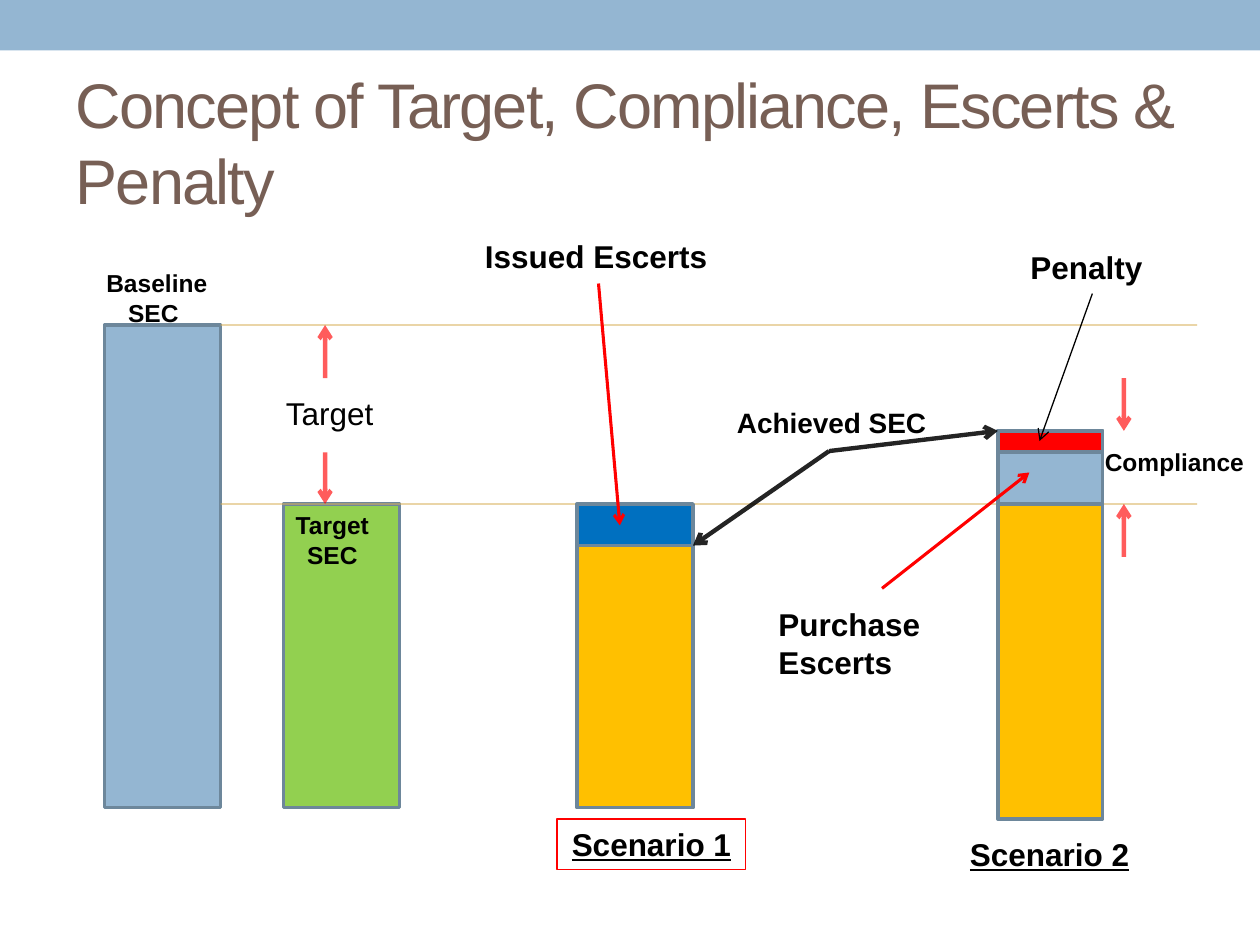
import pptx
import pptx.util
import pptx.dml.color
import pptx.oxml
import pptx.oxml.ns
import pptx.enum.text
import pptx.enum.shapes
from pptx.util import Inches

SHAPE = pptx.enum.shapes.MSO_SHAPE
ALIGN = pptx.enum.text.PP_ALIGN
FONT = "Arial"
BLACK, RED, BLUE, YELLOW = "000000", "FF0000", "94B6D2", "FFC000"
BASELINE_Y, TARGET_Y, ACHIEVED_Y = 2.58, 4, 3.42
BAR_W = 0.92


def rgb(color):
    return pptx.dml.color.RGBColor.from_string(color)


def add_xml(parent, tag, **attrs):
    """Append an empty drawing element with the given attributes."""
    el = pptx.oxml.parse_xml(f"<a:{tag} {pptx.oxml.ns.nsdecls('a')}/>")
    for name, value in attrs.items():
        el.set(name, value)
    parent.append(el)


def add_box(s, box, fill=None, line=None, width=2.08, shape=SHAPE.RECTANGLE):
    sp = s.shapes.add_shape(shape, *map(Inches, box))
    sp.shadow.inherit = False
    if fill:
        sp.fill.solid()
        sp.fill.fore_color.rgb = rgb(fill)
    else:
        sp.fill.background()
    if line:
        sp.line.color.rgb = rgb(line)
        sp.line.width = pptx.util.Pt(width)
    else:
        sp.line.fill.background()
    return sp


def add_bar(s, box, fill):
    return add_box(s, box, fill, "6D879B", shape=SHAPE.FLOWCHART_PROCESS)


def format_text(tf, size, color=BLACK, bold=True, align=ALIGN.LEFT, underline=None):
    tf.word_wrap = True
    for p in tf.paragraphs:
        p.alignment = align
        for r in p.runs:
            r.font.name = FONT
            r.font.size = pptx.util.Pt(size)
            r.font.bold = bold
            r.font.underline = underline
            r.font.color.rgb = rgb(color)


def add_label(s, box, text, size=18, **style):
    sp = s.shapes.add_textbox(*map(Inches, box))
    sp.text_frame.text = text
    format_text(sp.text_frame, size, **style)


def add_line(s, start, end, color, width, opacity=100, arrow=True):
    sp = s.shapes.add_connector(pptx.enum.shapes.MSO_CONNECTOR.STRAIGHT,
                                *map(Inches, start + end))
    sp.line.color.rgb = rgb(color)
    sp.line.width = pptx.util.Pt(width)
    ln = sp.line._get_or_add_ln()
    if opacity < 100:
        add_xml(ln.find(".//" + pptx.oxml.ns.qn("a:srgbClr")), "alpha",
                val=str(opacity * 1000))
    if arrow:
        add_xml(ln, "tailEnd", type="arrow")
    add_xml(sp._element.spPr, "effectLst")


def add_gap_arrow(s, x, start, end):
    """Short vertical arrow pointing at one end of a gap."""
    add_line(s, (x, start), (x, end), RED, 2.5, 63)


def build_header(s, box):
    x, y, w, h = box
    add_box(s, (x, y, w, 0.4), BLUE)
    title = s.shapes.title
    title.left, title.top = Inches(x + 0.5), Inches(y + 0.58)
    title.width, title.height = Inches(w - 1), Inches(h - 0.58)
    tf = title.text_frame
    tf.text = "Concept of Target, Compliance, Escerts & Penalty"
    tf.auto_size = pptx.enum.text.MSO_AUTO_SIZE.NONE
    tf.vertical_anchor = pptx.enum.text.MSO_ANCHOR.MIDDLE
    format_text(tf, 36, "775F55", bold=None)
    tf.paragraphs[0].runs[0].font._element.set("spc", "-100")


def build_baseline_and_target(s, box):
    x, y, w, h = box
    target_x = x + w - BAR_W
    add_bar(s, (x, y, BAR_W, h), BLUE)
    add_bar(s, (target_x, TARGET_Y, BAR_W, y + h - TARGET_Y), "92D050")
    # Reference levels across the chart
    for level in (y, TARGET_Y):
        add_line(s, (x + BAR_W, level), (9.5, level), "D8B25C", 0.75, 81, arrow=False)
    add_label(s, (x - 0.25, y - 0.5, 1.33, 0.57), "Baseline SEC ", 14,
              align=ALIGN.CENTER)
    add_label(s, (target_x - 0.25, TARGET_Y, 1.33, 0.57), "Target \nSEC ", 14,
              align=ALIGN.CENTER)
    # Target gap
    add_label(s, (target_x - 0.08, y + 0.5, 1, 0.4), "Target", bold=False)
    add_gap_arrow(s, target_x + 0.33, y + 0.42, y)
    add_gap_arrow(s, target_x + 0.33, TARGET_Y - 0.41, TARGET_Y)


def build_scenario_1(s, box):
    x, y, w, h = box
    issued_h = 0.33
    add_bar(s, (x, y + issued_h, w, h - issued_h), YELLOW)
    add_bar(s, (x, y, w, issued_h), "0070C0")
    caption = add_box(s, (x - 0.16, y + h + 0.09, 1.5, 0.4), line=RED, width=0.75)
    caption.text_frame.text = "Scenario 1 "
    format_text(caption.text_frame, 18, align=ALIGN.CENTER, underline=True)
    # Issued certificates callout
    add_label(s, (x - 0.83, y - 2.17, 2.08, 0.4), "Issued Escerts")
    add_line(s, (x + 0.17, y - 1.75), (x + 0.34, y + 0.17), RED, 1.75)


def build_scenario_2(s, box):
    x, y, w, h = box
    add_bar(s, (x, y, w, h), YELLOW)
    add_bar(s, (x, y, w, TARGET_Y - y), BLUE)
    add_bar(s, (x, y, w, 0.17), RED)
    add_label(s, (x - 0.34, y + h + 0.08, 1.5, 0.4), "Scenario 2 ",
              align=ALIGN.CENTER, underline=True)
    # Compliance gap
    add_gap_arrow(s, x + 1, y - 0.42, y)
    add_gap_arrow(s, x + 1, TARGET_Y + 0.42, TARGET_Y)
    add_label(s, (x + 0.75, y + 0.08, 1.33, 0.34), "Compliance", 14)
    # Purchase and penalty callouts
    add_label(s, (x - 1.84, y + 1.33, 1.33, 0.71), "Purchase Escerts")
    add_line(s, (x - 0.92, y + 1.25), (x + 0.25, y + 0.33), RED, 1.75)
    add_label(s, (x + 0.16, y - 1.5, 1.17, 0.4), "Penalty")
    add_line(s, (x + 0.75, y - 1.09), (x + 0.33, y + 0.08), BLACK, 0.75)


def build_achieved(s, box):
    """Label whose two arrows reach the achieved level of each scenario."""
    x, y, w, h = box
    add_label(s, (x + 0.25, y - 0.25, 1.75, 0.37), "Achieved SEC", 16)
    for end in ((x, y + h), (x + w, y)):
        add_line(s, (x + 1.08, y + 0.16), end, BLACK, 2.5, 86)


def main():
    prs = pptx.Presentation()
    prs.slide_width, prs.slide_height = Inches(10), Inches(7.5)
    s = prs.slides.add_slide(prs.slide_layouts[5])
    build_header(s, (0, 0, 10, 1.66))
    build_baseline_and_target(s, (0.83, BASELINE_Y, 2.34, 3.83))
    build_scenario_1(s, (4.58, TARGET_Y, BAR_W, 2.41))
    build_scenario_2(s, (7.92, ACHIEVED_Y, 0.83, 3.08))
    build_achieved(s, (5.5, ACHIEVED_Y, 2.42, 0.91))
    prs.save("out.pptx")


if __name__ == "__main__":
    main()
